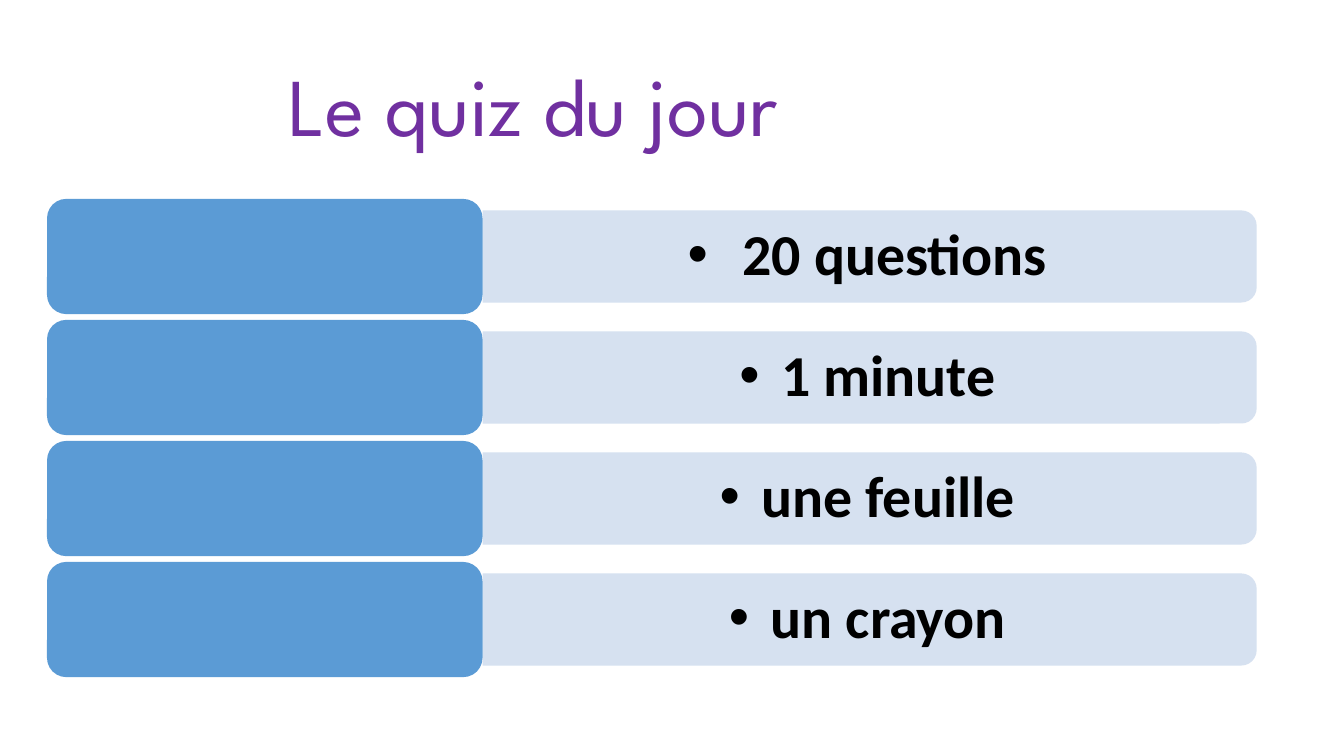
from lxml.etree import SubElement
from pptx import Presentation
from pptx.dml.color import RGBColor
from pptx.enum.shapes import MSO_SHAPE
from pptx.enum.text import MSO_ANCHOR, PP_ALIGN
from pptx.oxml.ns import qn
from pptx.util import Cm, Pt

PURPLE = RGBColor(0x70, 0x30, 0xA0)
BLUE = RGBColor(0x5B, 0x9B, 0xD5)
PALE_BLUE = RGBColor(0xD2, 0xDE, 0xEF)
BLACK = RGBColor(0, 0, 0)

ITEMS = [" 20 questions", "1 minute", "une feuille", "un crayon"]


def write_line(para, text, font_name, size, color, bold=False):
    para.alignment = PP_ALIGN.CENTER
    para.line_spacing = 0.9
    span = para.add_run()
    span.text = text
    span.font.name = font_name
    span.font.size = Pt(size)
    span.font.bold = bold
    span.font.color.rgb = color


def add_bullet(para):
    properties = para._p.get_or_add_pPr()
    properties.set("marL", str(Cm(0.79)))
    properties.set("indent", str(-Cm(0.79)))
    SubElement(properties, qn("a:buFont"), typeface="Arial")
    SubElement(properties, qn("a:buChar"), char="•")


def add_block(shapes, preset, left, top, width, height, color):
    block = shapes.add_shape(preset, left, top, width, height)
    block.shadow.inherit = False
    block.fill.solid()
    block.fill.fore_color.rgb = color
    block.line.fill.background()
    return block


def add_title(page, left, top, width, height):
    box = page.shapes.add_textbox(left, top, width, height)
    box.text_frame.word_wrap = True
    write_line(box.text_frame.paragraphs[0], "Le quiz du jour", "League Spartan", 44, PURPLE)


def add_bar(shapes, left, middle, length, thickness):
    bar = add_block(shapes, MSO_SHAPE.ROUND_2_SAME_RECTANGLE,
                    left + (length - thickness) // 2, middle - length // 2,
                    thickness, length, PALE_BLUE)
    bar.rotation = 90
    color = bar.fill._xPr.find(qn("a:solidFill"))[0]
    SubElement(color, qn("a:alpha"), val="90000")


def add_item_text(shapes, text, left, middle, width, height):
    box = shapes.add_textbox(left, middle - height // 2, width, height)
    frame = box.text_frame
    frame.word_wrap = True
    frame.vertical_anchor = MSO_ANCHOR.MIDDLE
    frame.margin_left = frame.margin_right = Cm(0.33)
    frame.margin_top = frame.margin_bottom = Cm(0.15)
    para = frame.paragraphs[0]
    add_bullet(para)
    write_line(para, text, "Calibri", 31, BLACK, bold=True)


def add_item_list(page, left, top, width, height):
    shapes = page.shapes.add_group_shape().shapes
    gap = Cm(0.11)
    row_height = (height - gap * (len(ITEMS) - 1)) // len(ITEMS)
    label_width = int(width * 0.36)
    bar_left = left + label_width
    bar_length = width - label_width
    for index, text in enumerate(ITEMS):
        row_top = top + index * (row_height + gap)
        middle = row_top + row_height // 2
        add_bar(shapes, bar_left, middle, bar_length, int(row_height * 0.8))
        add_item_text(shapes, text, bar_left, middle, bar_length - Cm(0.09), Cm(1.58))
        add_block(shapes, MSO_SHAPE.ROUNDED_RECTANGLE, left, row_top,
                  label_width, row_height, BLUE)


def main():
    deck = Presentation()
    deck.slide_width = Cm(25.4)
    deck.slide_height = Cm(14.29)
    page = deck.slides.add_slide(deck.slide_layouts[6])
    add_title(page, Cm(2.34), Cm(1.12), Cm(15.49), Cm(2.64))
    add_item_list(page, Cm(0.89), Cm(3.76), Cm(22.86), Cm(9.04))
    deck.save("out.pptx")


if __name__ == "__main__":
    main()
